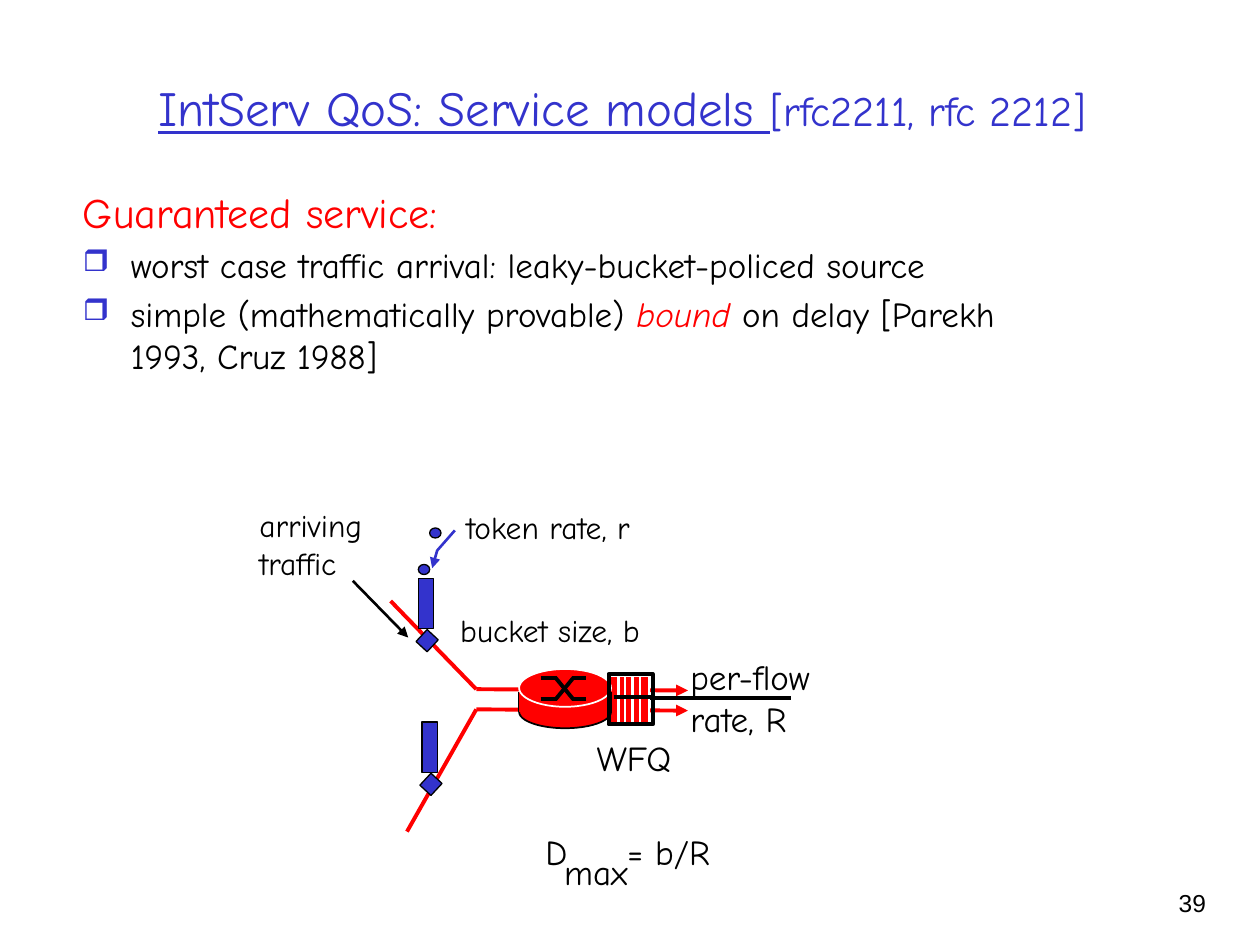
from lxml import etree
from pptx import Presentation
from pptx.dml.color import RGBColor
from pptx.enum.shapes import MSO_CONNECTOR, MSO_SHAPE
from pptx.enum.text import MSO_ANCHOR, MSO_AUTO_SIZE, PP_ALIGN
from pptx.oxml.ns import qn
from pptx.util import Inches, Pt

BLUE = RGBColor(0x33, 0x33, 0xCC)
RED = RGBColor(0xFF, 0x00, 0x00)
BLACK = RGBColor(0x00, 0x00, 0x00)
WHITE = RGBColor(0xFF, 0xFF, 0xFF)
FONT = "Comic Neue"
STRAIGHT = MSO_CONNECTOR.STRAIGHT
RECTANGLE, OVAL = MSO_SHAPE.RECTANGLE, MSO_SHAPE.OVAL
LEFT, CENTER, RIGHT = PP_ALIGN.LEFT, PP_ALIGN.CENTER, PP_ALIGN.RIGHT
TITLE_ONLY = 5

presentation = Presentation()
presentation.slide_width, presentation.slide_height = Inches(10), Inches(7.5)
slide = presentation.slides.add_slide(presentation.slide_layouts[TITLE_ONLY])


def add_line(x1, y1, x2, y2, color, width, arrow=False):
    line = slide.shapes.add_connector(
        STRAIGHT, Inches(x1), Inches(y1), Inches(x2), Inches(y2))
    line.line.color.rgb = color
    line.line.width = Pt(width)
    if arrow:
        etree.SubElement(line.line._get_or_add_ln(), qn("a:tailEnd"), type="triangle")
    etree.SubElement(line._element.spPr, qn("a:effectLst"))


def add_shape(kind, left, top, width, height, fill, outline, weight=0.75, rotation=0):
    shape = slide.shapes.add_shape(
        kind, Inches(left), Inches(top), Inches(width), Inches(height))
    shape.shadow.inherit = False
    shape.rotation = rotation
    if fill is None:
        shape.fill.background()
    else:
        shape.fill.solid()
        shape.fill.fore_color.rgb = fill
    if outline is None:
        shape.line.fill.background()
    else:
        shape.line.color.rgb = outline
        shape.line.width = Pt(weight)


# Title
title = slide.shapes.title
title.left, title.top = Inches(0.55), Inches(0.22)
title.width, title.height = Inches(8.77), Inches(1.25)
title.text_frame.vertical_anchor = MSO_ANCHOR.MIDDLE
title.text_frame.auto_size = MSO_AUTO_SIZE.NONE
paragraph = title.text_frame.paragraphs[0]
paragraph.alignment = CENTER
for text, size, underline in [("IntServ QoS: Service models ", 28, True),
                              ("[rfc2211, rfc 2212]", 24, False)]:
    run = paragraph.add_run()
    run.text = text
    run.font.color.rgb = BLUE
    for name, value in {"name": FONT, "size": Pt(size), "underline": underline}.items():
        setattr(run.font, name, value)

# Body: red heading and two bulleted points
body = slide.shapes.add_textbox(Inches(0.56), Inches(1.43), Inches(8.11), Inches(2.4))
body.text_frame.word_wrap = True
body_paragraphs = [
    (24, False, [("Guaranteed service:", RED, False)]),
    (20, True, [("worst case traffic arrival: leaky-bucket-policed source", BLACK, False)]),
    (20, True, [("simple (mathematically provable) ", BLACK, False),
                ("bound", RED, True),
                (" on delay [Parekh 1993, Cruz 1988]", BLACK, False)]),
]
for index, (size, bulleted, runs) in enumerate(body_paragraphs):
    paragraph = body.text_frame.add_paragraph() if index else body.text_frame.paragraphs[0]
    paragraph.space_before = Pt(size * 0.2)
    properties = paragraph._p.get_or_add_pPr()
    properties.set("marL", str(Inches(0.38)))
    properties.set("indent", str(Inches(-0.38)))
    if bulleted:
        bullet_color = etree.SubElement(properties, qn("a:buClr"))
        etree.SubElement(bullet_color, qn("a:srgbClr"), val=str(BLUE))
        etree.SubElement(properties, qn("a:buSzPct"), val="85000")
        etree.SubElement(properties, qn("a:buChar"), char="❒")
    for text, color, italic in runs:
        run = paragraph.add_run()
        run.text = text
        run.font.color.rgb = color
        for name, value in {"name": FONT, "size": Pt(size), "italic": italic}.items():
            setattr(run.font, name, value)

# Traffic flows into and out of the router
add_line(3.1, 4.77, 3.78, 5.47, RED, 2.25)
add_line(3.78, 5.47, 5.46, 5.48, RED, 2.25, arrow=True)
add_line(3.78, 5.63, 5.46, 5.64, RED, 2.25, arrow=True)
add_line(3.23, 6.6, 3.78, 5.63, RED, 2.25)
add_line(5.06, 5.54, 6.28, 5.54, BLACK, 2.25)

# Queue slots
add_shape(RECTANGLE, 4.8, 5.39, 0.38, 0.32, RED, WHITE, 1.5, 270)
for x in (4.91, 4.96, 5.02, 5.08):
    add_line(x, 5.73, x, 5.36, WHITE, 1.5)

# Router cylinder
add_shape(OVAL, 4.12, 5.52, 0.73, 0.26, RED, BLACK, 1)
for x in (4.12, 4.85):
    add_line(x, 5.49, x, 5.65, BLACK, 1)
add_shape(RECTANGLE, 4.12, 5.49, 0.72, 0.16, RED, None)
add_shape(OVAL, 4.12, 5.31, 0.73, 0.3, RED, WHITE, 1)

# Crossing symbol on the router
for start, end in [(5.38, 5.55), (5.55, 5.38)]:
    add_line(4.29, start, 4.42, start, BLACK, 2.25)
    add_line(4.41, start, 4.55, end, BLACK, 2.25)
    add_line(4.54, end, 4.65, end, BLACK, 2.25)

# Queue frame
add_shape(RECTANGLE, 4.83, 5.35, 0.35, 0.4, None, BLACK, 2.25)
add_line(4.87, 5.53, 5.2, 5.53, BLACK, 2.25)

# Tokens and their path into the bucket
for left, top in [(3.32, 4.48), (3.41, 4.19)]:
    add_shape(OVAL, left, top, 0.09, 0.08, BLUE, BLACK)
builder = slide.shapes.build_freeform(Inches(3.61), Inches(4.21))
builder.add_line_segments(
    [(Inches(3.47), Inches(4.37)), (Inches(3.43), Inches(4.51))], close=False)
token_path = builder.convert_to_shape()
token_path.shadow.inherit = False
token_path.fill.background()
token_path.line.color.rgb = BLUE
token_path.line.width = Pt(1.5)
etree.SubElement(token_path.line._get_or_add_ln(), qn("a:tailEnd"), type="triangle")

# Leaky buckets, each with its gate below
for left, top in [(3.35, 5.73), (3.32, 4.59)]:
    add_shape(RECTANGLE, left + 0.01, top + 0.43, 0.12, 0.13, BLUE, BLACK, rotation=42.9)
    add_shape(RECTANGLE, left, top, 0.12, 0.4, BLUE, BLACK)
add_line(2.8, 4.61, 3.24, 5.06, BLACK, 1.5, arrow=True)

# Labels and slide number
labels = [
    (1.96, 3.97, 1.09, 0.7, LEFT, 18, FONT, ["arriving", "traffic"]),
    (3.5, 3.98, 1.7, 0.4, CENTER, 18, FONT, ["token rate, r"]),
    (3.45, 4.8, 1.83, 0.4, CENTER, 18, FONT, ["bucket size, b"]),
    (5.38, 5.15, 1.31, 0.77, LEFT, 20, FONT, ["per-flow", "rate, R"]),
    (4.54, 5.8, 0.98, 0.43, CENTER, 20, FONT, ["WFQ"]),
    (4.23, 6.54, 1.53, 0.43, LEFT, 20, FONT, ["D\t= b/R"]),
    (4.37, 6.7, 0.72, 0.43, CENTER, 20, FONT, ["max"]),
    (8.93, 7, 0.74, 0.5, RIGHT, 14, "Arial", ["39"]),
]
for left, top, width, height, alignment, size, font, lines in labels:
    label = slide.shapes.add_textbox(
        Inches(left), Inches(top), Inches(width), Inches(height))
    label.text_frame.word_wrap = False
    for index, text in enumerate(lines):
        paragraph = label.text_frame.add_paragraph() if index else label.text_frame.paragraphs[0]
        paragraph.alignment = alignment
        if "\t" in text:
            tabs = etree.SubElement(paragraph._p.get_or_add_pPr(), qn("a:tabLst"))
            etree.SubElement(tabs, qn("a:tab"), pos=str(Inches(0.65)), algn="l")
        run = paragraph.add_run()
        run.text = text
        run.font.name = font
        run.font.size = Pt(size)
        run.font.color.rgb = BLACK

presentation.save("out.pptx")
